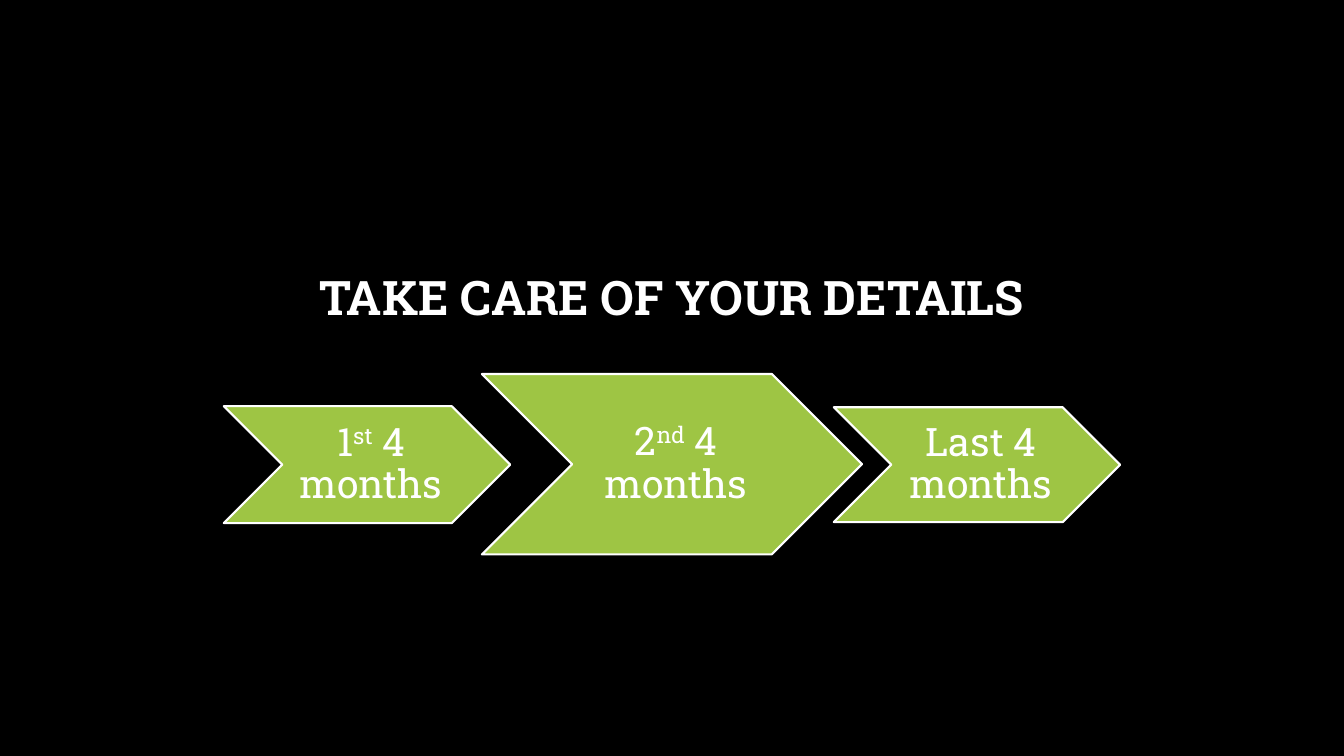
from dataclasses import dataclass

from pptx import Presentation
from pptx.dml.color import RGBColor
from pptx.enum.shapes import MSO_SHAPE
from pptx.enum.text import MSO_ANCHOR, PP_ALIGN
from pptx.util import Inches, Pt


@dataclass(frozen=True)
class Theme:
    font: str = "Roboto Slab"
    background: RGBColor = RGBColor(0x00, 0x00, 0x00)
    text: RGBColor = RGBColor(0xFF, 0xFF, 0xFF)
    arrow: RGBColor = RGBColor(0x9E, 0xC5, 0x44)
    title_size: int = 34
    label_size: int = 28
    line_width: float = 1.5


class Deck:
    def __init__(self, prs, theme):
        self.theme = theme
        self.s = prs.slides.add_slide(prs.slide_layouts[6])
        fill = self.s.background.fill
        fill.solid()
        fill.fore_color.rgb = theme.background

    def text(self, box, parts, size, anchor, insets, bold=False):
        tf = self.s.shapes.add_textbox(*map(Inches, box)).text_frame
        tf.word_wrap = True
        tf.vertical_anchor = anchor
        tf.margin_left, tf.margin_top, tf.margin_right, tf.margin_bottom = map(Inches, insets)
        p = tf.paragraphs[0]
        p.alignment = PP_ALIGN.CENTER
        p.line_spacing = 0.9
        for content, raised in parts:
            r = p.add_run()
            r.text = content
            r.font.name = self.theme.font
            r.font.size = Pt(size)
            r.font.bold = bold
            r.font.color.rgb = self.theme.text
            if raised:
                r.font._element.set("baseline", "30000")

    def title(self, box, content):
        self.text(box, [(content, False)], self.theme.title_size,
                  MSO_ANCHOR.BOTTOM, (0.1, 0.05, 0.1, 0.61), bold=True)

    def chevron(self, box, parts):
        left, top, width, height = box
        sp = self.s.shapes.add_shape(MSO_SHAPE.CHEVRON, *map(Inches, box))
        sp.shadow.inherit = False
        sp.fill.solid()
        sp.fill.fore_color.rgb = self.theme.arrow
        sp.line.color.rgb = self.theme.text
        sp.line.width = Pt(self.theme.line_width)
        label_box = (left + height / 2, top, width - height, height)
        self.text(label_box, parts, self.theme.label_size,
                  MSO_ANCHOR.MIDDLE, (0.12, 0.04, 0.04, 0.04))


def main():
    prs = Presentation()
    prs.slide_width = Inches(13.33)
    prs.slide_height = Inches(7.5)
    deck = Deck(prs, Theme())
    deck.title((1.34, 0.72, 10.64, 3.12), "TAKE CARE OF YOUR DETAILS")
    periods = [
        ((2.22, 4.03, 2.84, 1.16), [("1", False), ("st", True), (" 4 months", False)]),
        ((4.78, 3.71, 3.77, 1.79), [("2", False), ("nd", True), (" 4 months", False)]),
        ((8.27, 4.04, 2.84, 1.14), [("Last 4 months", False)]),
    ]
    for box, parts in periods:
        deck.chevron(box, parts)
    prs.save("out.pptx")


if __name__ == "__main__":
    main()
